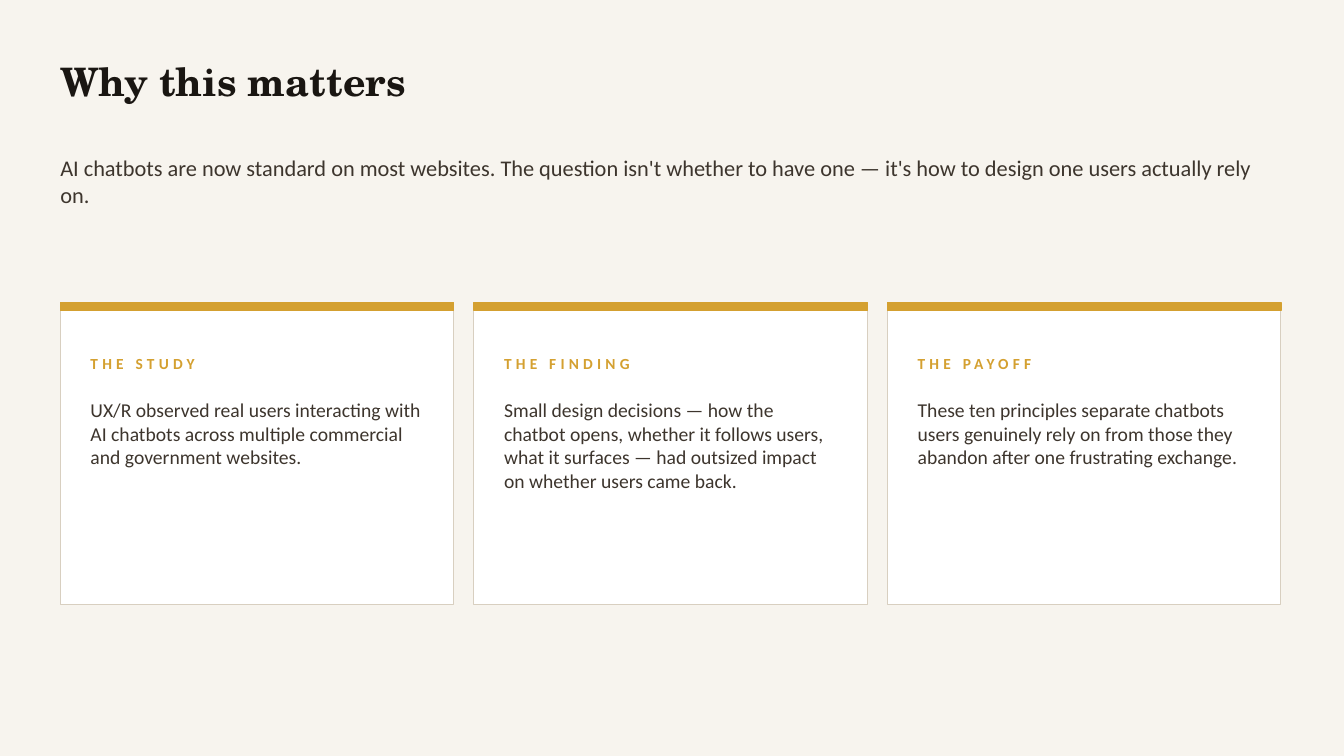
from pptx import Presentation
from pptx.dml.color import RGBColor
from pptx.enum.shapes import MSO_SHAPE
from pptx.enum.text import MSO_ANCHOR
from pptx.util import Cm, Pt

COLORS = {
    "paper": "F7F4EE",
    "ink": "1A1612",
    "body": "3D352D",
    "gold": "D4A030",
    "card": "FFFFFF",
    "border": "D8CFC0",
}
HEADING_FONT = "TeX Gyre Schola"
BODY_FONT = "Calibri"

MARGIN = 1.52
CARD_WIDTH, CARD_HEIGHT, CARD_GAP = 9.91, 7.62, 0.51
CARD_PADDING = 0.76

CARDS = [
    ("THE STUDY",
     "UX/R observed real users interacting with AI chatbots across multiple "
     "commercial and government websites."),
    ("THE FINDING",
     "Small design decisions — how the chatbot opens, whether it follows users, "
     "what it surfaces — had outsized impact on whether users came back."),
    ("THE PAYOFF",
     "These ten principles separate chatbots users genuinely rely on from those "
     "they abandon after one frustrating exchange."),
]


def rgb(name):
    return RGBColor.from_string(COLORS[name])


def add_text(slide, words, left, top, width, height, size, color="body",
             font=BODY_FONT, bold=False, anchor=MSO_ANCHOR.MIDDLE, spacing=0):
    """Place one run of text; left to height are in cm, spacing in points."""
    frame = slide.shapes.add_textbox(
        Cm(left), Cm(top), Cm(width), Cm(height)).text_frame
    frame.word_wrap = True
    frame.vertical_anchor = anchor
    frame.margin_left = frame.margin_right = 0
    frame.margin_top = frame.margin_bottom = 0
    run = frame.paragraphs[0].add_run()
    run.text = words
    run.font.name = font
    run.font.size = Pt(size)
    run.font.bold = bold
    run.font.color.rgb = rgb(color)
    if spacing:
        run._r.get_or_add_rPr().set("spc", str(spacing * 100))


def add_panel(slide, left, top, width, height, fill, line, line_width):
    panel = slide.shapes.add_shape(
        MSO_SHAPE.RECTANGLE, Cm(left), Cm(top), Cm(width), Cm(height))
    panel.shadow.inherit = False
    panel.fill.solid()
    panel.fill.fore_color.rgb = rgb(fill)
    panel.line.color.rgb = rgb(line)
    panel.line.width = Pt(line_width)


def add_header(slide, left, top, width):
    add_text(slide, "Why this matters", left, top, width, 1.52, 28,
             color="ink", font=HEADING_FONT, bold=True)
    add_text(slide,
             "AI chatbots are now standard on most websites. The question isn't "
             "whether to have one — it's how to design one users actually rely on.",
             left, top + 2.03, width, 2.54, 16)


def add_card(slide, label, message, left, top, width, height):
    add_panel(slide, left, top, width, height, "card", "border", 0.75)
    add_panel(slide, left, top, width, 0.2, "gold", "gold", 1)
    text_left, text_width = left + CARD_PADDING, width - 2 * CARD_PADDING
    add_text(slide, label, text_left, top + 1.02, text_width, 1.02, 11,
             color="gold", bold=True, spacing=3)
    add_text(slide, message, text_left, top + 2.41, text_width, 4.57, 14,
             anchor=MSO_ANCHOR.TOP)


def add_card_row(slide, left, top):
    for column, (label, message) in enumerate(CARDS):
        add_card(slide, label, message, left + column * (CARD_WIDTH + CARD_GAP),
                 top, CARD_WIDTH, CARD_HEIGHT)


def main():
    deck = Presentation()
    deck.slide_width, deck.slide_height = Cm(33.86), Cm(19.05)
    slide = deck.slides.add_slide(deck.slide_layouts[6])
    slide.background.fill.solid()
    slide.background.fill.fore_color.rgb = rgb("paper")
    add_header(slide, MARGIN, 1.27, 30.48)
    add_card_row(slide, MARGIN, 7.62)
    deck.save("out.pptx")


if __name__ == "__main__":
    main()
